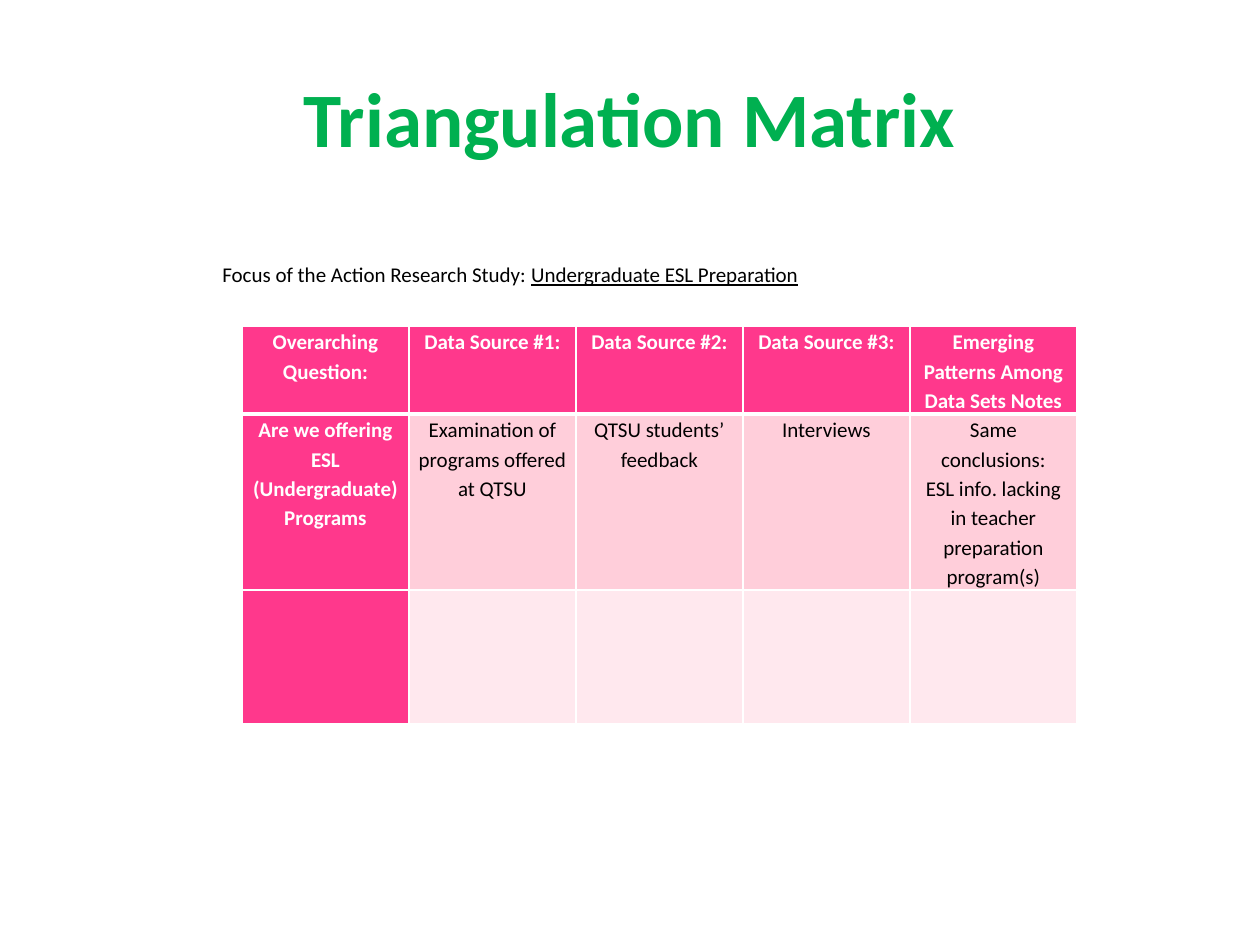
import pptx
import pptx.dml.color
import pptx.enum.text
import pptx.oxml
import pptx.oxml.ns
import pptx.util

PX = 914400 // 126
GREEN, PINK, WHITE, BLACK = "00B050", "FF388C", "FFFFFF", "000000"
BANDS = ["FFCEDA", "FFE8EE"]
CENTER = pptx.enum.text.PP_ALIGN.CENTER
MIDDLE = pptx.enum.text.MSO_ANCHOR.MIDDLE
TOP = pptx.enum.text.MSO_ANCHOR.TOP

HEADER = ["Overarching Question:", "Data Source #1:", "Data Source #2:",
          "Data Source #3:", "Emerging Patterns Among Data Sets Notes"]
FINDINGS = ["Are we offering ESL (Undergraduate) Programs",
            "Examination of programs offered at QTSU",
            "QTSU students’ feedback",
            "Interviews",
            "Same conclusions:\nESL info. lacking in teacher preparation program(s)"]


def px(n):
    return pptx.util.Emu(n * PX)


def rgb(color):
    return pptx.dml.color.RGBColor.from_string(color)


class SlideBuilder:
    font = "Calibri"

    def __init__(self, s):
        self.s = s

    def style(self, p, size, color, bold=False, align=None):
        p.alignment = align
        p.font.name = self.font
        p.font.size = pptx.util.Pt(size)
        p.font.bold = bold
        p.font.color.rgb = rgb(color)

    def text(self, box, runs, size, color, bold=False, align=None, anchor=TOP):
        """Add one line of (text, underlined) runs in a box of x, y, w, h."""
        tf = self.s.shapes.add_textbox(*map(px, box)).text_frame
        tf.word_wrap = True
        tf.vertical_anchor = anchor
        tf.margin_top = tf.margin_bottom = 0
        p = tf.paragraphs[0]
        self.style(p, size, color, bold, align)
        for text, underlined in runs:
            r = p.add_run()
            r.text = text
            if underlined:
                r.font.underline = True

    def borders(self, cell, widths):
        """Draw white borders, with widths in points for left, right, top, bottom."""
        tc_pr = cell._tc.get_or_add_tcPr()
        for i, (side, width) in enumerate(zip("LRTB", widths)):
            tc_pr.insert(i, pptx.oxml.parse_xml(
                f'<a:ln{side} {pptx.oxml.ns.nsdecls("a")} w="{width * 12700}">'
                f'<a:solidFill><a:srgbClr val="{WHITE}"/></a:solidFill></a:ln{side}>'))

    def cell(self, cell, text, fill, color, bold, widths):
        cell.fill.solid()
        cell.fill.fore_color.rgb = rgb(fill)
        cell.margin_left = cell.margin_right = px(9)
        cell.margin_top = cell.margin_bottom = 0
        cell.text_frame.text = text
        for p in cell.text_frame.paragraphs:
            self.style(p, 12, color, bold, CENTER)
            p.line_spacing = 1.15
        self.borders(cell, widths)

    def table(self, x, y, col_width, heights, rows):
        cols = len(rows[0])
        table = self.s.shapes.add_table(len(rows), cols, px(x), px(y),
                                        px(col_width * cols), px(sum(heights))).table
        for column in table.columns:
            column.width = px(col_width)
        for i, (height, texts) in enumerate(zip(heights, rows)):
            table.rows[i].height = px(height)
            widths = (1, 1, 3 if i == 1 else 1, 3 if i == 0 else 1)
            for j, text in enumerate(texts):
                heading = i == 0 or j == 0
                self.cell(table.cell(i, j), text, PINK if heading else BANDS[i - 1],
                          WHITE if heading else BLACK, heading, widths)


def main():
    prs = pptx.Presentation()
    prs.slide_width, prs.slide_height = px(1260), px(945)
    slide = SlideBuilder(prs.slides.add_slide(prs.slide_layouts[6]))
    slide.text((63, 38, 1134, 157), [("Triangulation Matrix", False)],
               44, GREEN, True, CENTER, MIDDLE)
    slide.table(242, 326, 167, [88, 176, 134], [HEADER, FINDINGS, [""] * 5])
    slide.text((210, 262, 1050, 63),
               [("Focus of the Action Research Study: ", False),
                ("Undergraduate ESL Preparation", True)], 12, BLACK)
    prs.save("out.pptx")


if __name__ == "__main__":
    main()
